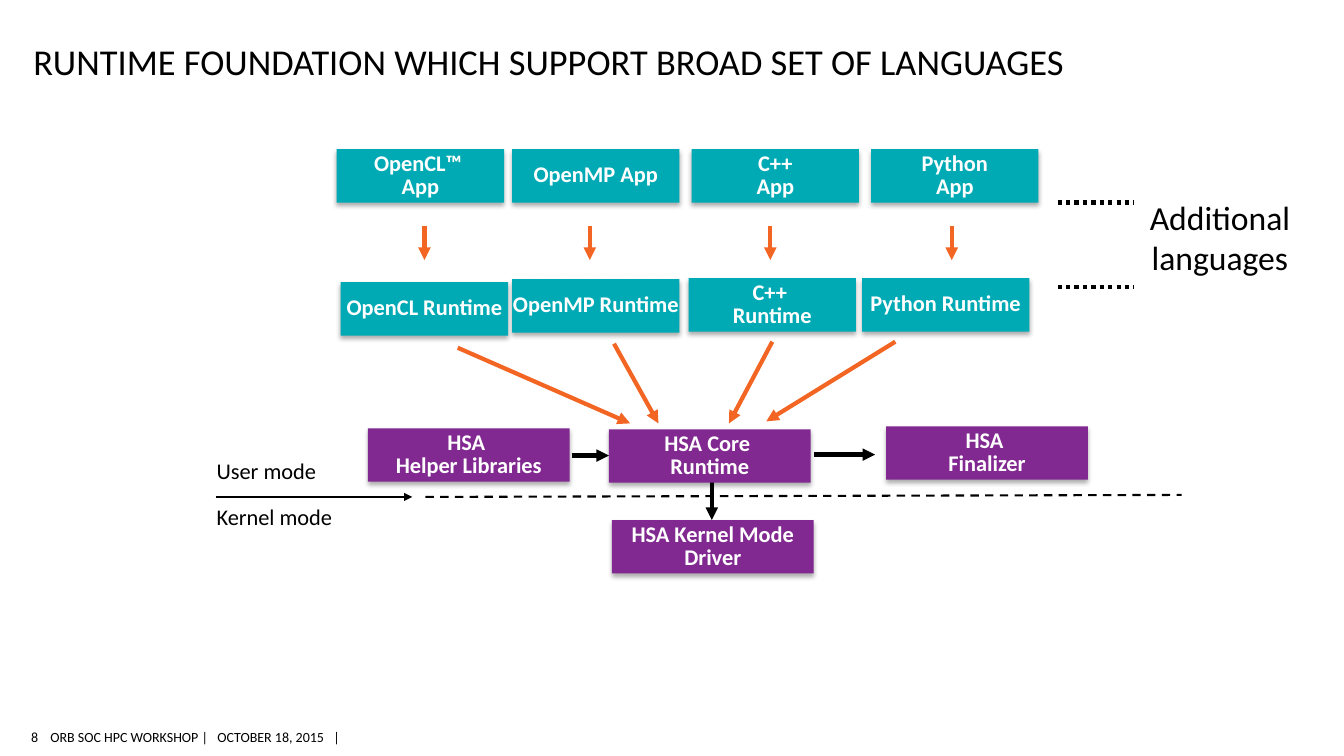
from collections import namedtuple
from dataclasses import dataclass

from lxml.etree import SubElement
from pptx import Presentation
from pptx.dml.color import RGBColor
from pptx.enum.dml import MSO_LINE
from pptx.enum.shapes import MSO_CONNECTOR, MSO_SHAPE
from pptx.enum.text import MSO_ANCHOR, MSO_AUTO_SIZE, PP_ALIGN
from pptx.oxml.ns import qn
from pptx.util import Inches, Pt

Box = namedtuple("Box", "left top width height")


@dataclass(frozen=True)
class Theme:
    font: str = "Calibri"
    black: RGBColor = RGBColor(0x00, 0x00, 0x00)
    white: RGBColor = RGBColor(0xFF, 0xFF, 0xFF)
    teal: RGBColor = RGBColor(0x00, 0xAA, 0xB5)
    purple: RGBColor = RGBColor(0x81, 0x29, 0x90)
    orange: RGBColor = RGBColor(0xF2, 0x65, 0x22)
    title_size: int = 26
    callout_size: int = 24
    label_size: int = 16
    footer_size: int = 10
    thick: float = 3
    thin: float = 1.5


THEME = Theme()


def format_text(text_frame, size, color, bold=False, align=PP_ALIGN.LEFT, spacing=None):
    for paragraph in text_frame.paragraphs:
        paragraph.alignment = align
        paragraph.line_spacing = spacing
        for run in paragraph.runs:
            run.font.name = THEME.font
            run.font.size = Pt(size)
            run.font.bold = bold
            run.font.color.rgb = color


def set_margins(text_frame, horizontal, top, bottom):
    text_frame.margin_left = text_frame.margin_right = Inches(horizontal)
    text_frame.margin_top = Inches(top)
    text_frame.margin_bottom = Inches(bottom)


def add_label(slide, box, text, size, align=PP_ALIGN.LEFT):
    shape = slide.shapes.add_textbox(*map(Inches, box))
    text_frame = shape.text_frame
    text_frame.word_wrap = True
    text_frame.text = text
    format_text(text_frame, size, THEME.black, align=align)
    return text_frame


def add_soft_shadow(shape):
    effects = shape._element.spPr.find(qn("a:effectLst"))
    shadow = SubElement(effects, qn("a:outerShdw"), blurRad=str(Pt(3.5)),
                        dist=str(Pt(2.2)), dir="5400000", rotWithShape="0")
    color = SubElement(shadow, qn("a:srgbClr"), val=str(THEME.black))
    SubElement(color, qn("a:alpha"), val="32000")


def add_block(slide, box, text, fill):
    shape = slide.shapes.add_shape(MSO_SHAPE.RECTANGLE, *map(Inches, box))
    shape.fill.solid()
    shape.fill.fore_color.rgb = fill
    shape.line.fill.background()
    shape.shadow.inherit = False
    add_soft_shadow(shape)
    text_frame = shape.text_frame
    text_frame.word_wrap = True
    text_frame.vertical_anchor = MSO_ANCHOR.MIDDLE
    set_margins(text_frame, 0, 0, 0)
    text_frame.text = text
    format_text(text_frame, THEME.label_size, THEME.white, True, PP_ALIGN.CENTER, 0.85)


def add_line(slide, start, end, color, width, dash=None, arrow=False):
    connector = slide.shapes.add_connector(MSO_CONNECTOR.STRAIGHT, *map(Inches, start + end))
    connector.line.color.rgb = color
    connector.line.width = Pt(width)
    if dash:
        connector.line.dash_style = dash
    properties = connector._element.spPr
    if arrow:
        SubElement(properties.find(qn("a:ln")), qn("a:tailEnd"), type="triangle")
    SubElement(properties, qn("a:effectLst"))


def add_title(slide, box):
    title = slide.shapes.title
    title.left, title.top, title.width, title.height = map(Inches, box)
    text_frame = title.text_frame
    text_frame.auto_size = MSO_AUTO_SIZE.NONE
    text_frame.vertical_anchor = MSO_ANCHOR.BOTTOM
    set_margins(text_frame, 0, 0.05, 0)
    text_frame.text = "RUNTIME FOUNDATION WHICH SUPPORT BROAD SET OF LANGUAGES"
    format_text(text_frame, THEME.title_size, THEME.black)


def add_footer(slide, box):
    number_width, gap = 0.16, 0.12
    text_left = box.left + number_width + gap
    parts = (
        (box.left, number_width, "8", PP_ALIGN.RIGHT),
        (text_left, box.left + box.width - text_left,
         "ORB SOC HPC WORKSHOP |   OCTOBER 18, 2015   |", PP_ALIGN.LEFT),
    )
    for left, width, text, align in parts:
        text_frame = add_label(slide, Box(left, box.top, width, box.height), text,
                               THEME.footer_size, align)
        text_frame.word_wrap = False
        text_frame.vertical_anchor = MSO_ANCHOR.MIDDLE
        set_margins(text_frame, 0, 0.04, 0.04)


def add_language_stacks(slide, box):
    block_width, block_height = 1.66, 0.53
    arrow_top, arrow_bottom = box.top + 0.76, box.top + 1.1
    stacks = (
        ("OpenCL™ \vApp", 0, "OpenCL Runtime", 0.04, 1.32, 0.87, (1.2, 1.97), (2.91, 2.72)),
        ("OpenMP App", 1.74, "OpenMP Runtime", 1.74, 1.29, 2.51, (2.75, 1.93), (3.19, 2.72)),
        ("C++\nApp", 3.52, "C++ \nRuntime", 3.49, 1.28, 4.3, (4.32, 1.91), (3.89, 2.72)),
        ("Python\nApp", 5.3, "Python Runtime", 5.21, 1.28, 6.1, (5.54, 1.91), (4.26, 2.7)),
    )
    for app, app_x, runtime, runtime_x, runtime_y, arrow_x, start, end in stacks:
        add_block(slide, Box(box.left + app_x, box.top, block_width, block_height),
                  app, THEME.teal)
        add_block(slide, Box(box.left + runtime_x, box.top + runtime_y,
                             block_width, block_height), runtime, THEME.teal)
        middle = box.left + arrow_x
        add_line(slide, (middle, arrow_top), (middle, arrow_bottom),
                 THEME.orange, THEME.thick, arrow=True)
        add_line(slide, (box.left + start[0], box.top + start[1]),
                 (box.left + end[0], box.top + end[1]),
                 THEME.orange, THEME.thick, arrow=True)


def add_more_languages(slide, box):
    for y in (box.top + 0.11, box.top + 0.95):
        add_line(slide, (box.left, y), (box.left + 0.76, y),
                 THEME.black, THEME.thick, MSO_LINE.ROUND_DOT)
    add_label(slide, Box(box.left + 0.38, box.top, box.width - 0.38, 0.91),
              "Additional languages", THEME.callout_size, PP_ALIGN.CENTER)


def add_mode_divider(slide, box):
    middle = box.top + 0.44
    for text, top in (("User mode", box.top), ("Kernel mode", box.top + 0.45)):
        add_label(slide, Box(box.left, top, 1.76, 0.37), text, THEME.label_size)
    add_line(slide, (box.left + 0.09, middle), (box.left + 2.04, middle),
             THEME.black, THEME.thin, arrow=True)
    add_line(slide, (box.left + 2.17, middle), (box.left + box.width, middle - 0.02),
             THEME.black, THEME.thin, MSO_LINE.DASH)


def add_hsa_core(slide, box):
    arrows = (
        ((3.41, 0.53), (3.41, 0.93)),
        ((4.42, 0.28), (5.03, 0.28)),
        ((2.02, 0.29), (2.39, 0.29)),
    )
    blocks = (
        ("HSA \vHelper Libraries", 0, 0.02),
        ("HSA Core \vRuntime", 2.39, 0.03),
        ("HSA \vFinalizer", 5.14, 0),
        ("HSA Kernel Mode Driver", 2.42, 0.93),
    )
    for start, end in arrows:
        add_line(slide, (box.left + start[0], box.top + start[1]),
                 (box.left + end[0], box.top + end[1]),
                 THEME.black, THEME.thick, arrow=True)
    for text, x, y in blocks:
        add_block(slide, Box(box.left + x, box.top + y, 2, 0.53), text, THEME.purple)


def main():
    presentation = Presentation()
    presentation.slide_width = Inches(13.33)
    presentation.slide_height = Inches(7.5)
    slide = presentation.slides.add_slide(presentation.slide_layouts[5])
    add_title(slide, Box(0.33, 0.3, 11.4, 0.52))
    add_footer(slide, Box(0.22, 7.18, 3.24, 0.26))
    add_mode_divider(slide, Box(2.05, 4.49, 9.67, 0.82))
    add_hsa_core(slide, Box(3.65, 4.23, 7.14, 1.46))
    add_language_stacks(slide, Box(3.34, 1.48, 6.96, 2.72))
    add_more_languages(slide, Box(10.49, 1.9, 2.84, 0.95))
    presentation.save("out.pptx")


if __name__ == "__main__":
    main()
